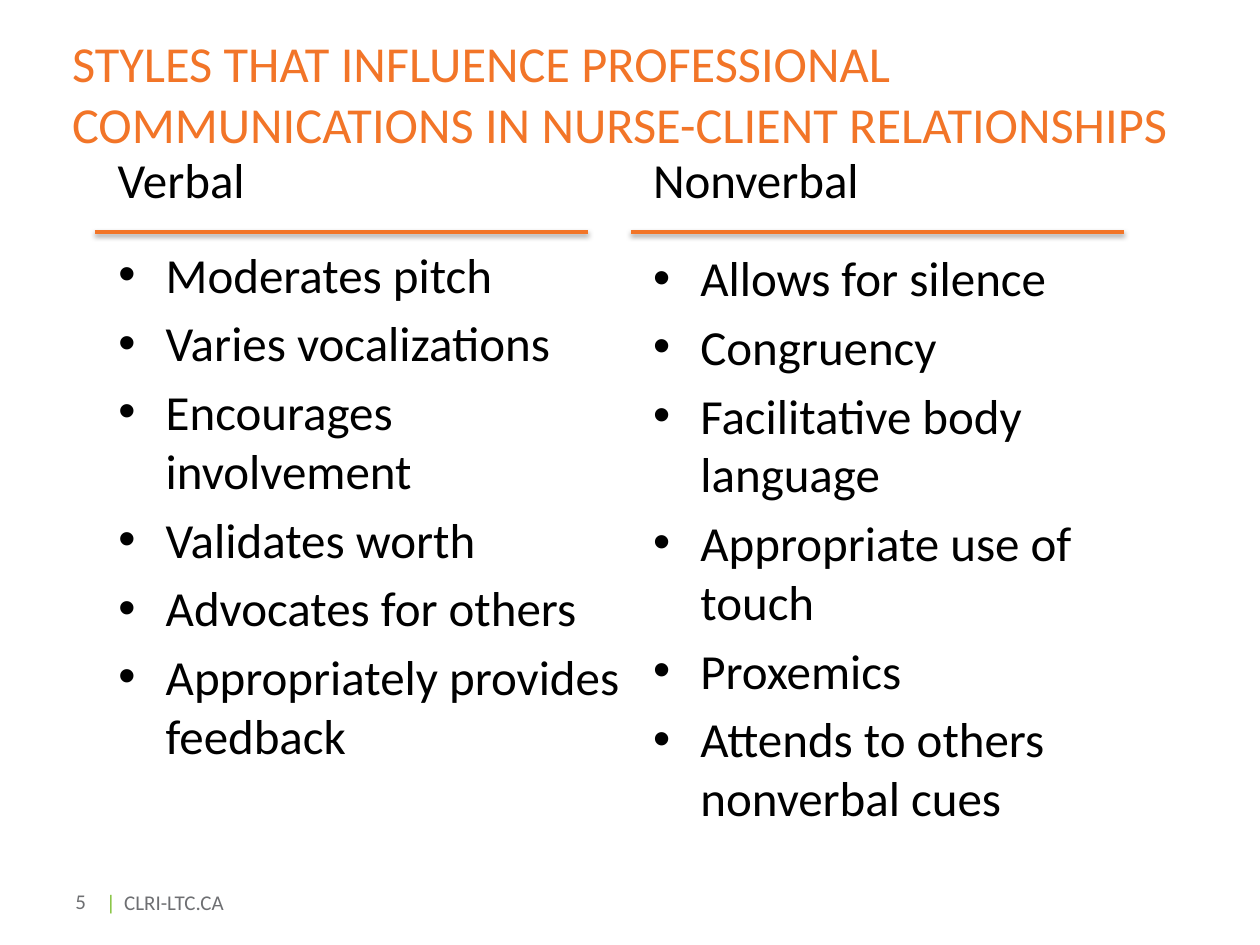
import pptx
import pptx.util
import pptx.dml.color
import pptx.enum.shapes
import pptx.enum.text
import pptx.oxml
import pptx.oxml.ns

Pt = pptx.util.Pt
Align = pptx.enum.text.PP_ALIGN
Anchor = pptx.enum.text.MSO_ANCHOR

COLORS = {"orange": "F27528", "black": "000000", "gray": "6E6F72", "green": "7CBF30"}
FONT = "Calibri"
BODY_SIZE = 28
HANG = 27
RULE_TOP = 132.5
RULE_WIDTH = 282

TITLE = "STYLES THAT INFLUENCE PROFESSIONAL COMMUNICATIONS IN NURSE-CLIENT RELATIONSHIPS"
COLUMNS = [
    {
        "heading": "Verbal",
        "heading_box": (60, 82, 288, 50),
        "list_box": (60.5, 136, 312, 279),
        "rule_left": 54,
        "styles": [
            "Moderates pitch",
            "Varies vocalizations",
            "Encourages involvement",
            "Validates worth",
            "Advocates for others",
            "Appropriately provides feedback",
        ],
    },
    {
        "heading": "Nonverbal",
        "heading_box": (366, 82, 288, 50),
        "list_box": (366, 138, 318, 285),
        "rule_left": 360.5,
        "styles": [
            "Allows for silence",
            "Congruency",
            "Facilitative body language",
            "Appropriate use of touch",
            "Proxemics",
            "Attends to others nonverbal cues",
        ],
    },
]


def drawing_element(xml):
    tag, rest = xml[1:].split(" ", 1)
    return pptx.oxml.parse_xml(f"<{tag} {pptx.oxml.ns.nsdecls('a')} {rest}")


def style_font(font, size, color):
    font.name = FONT
    font.size = Pt(size)
    font.bold = False
    font.color.rgb = pptx.dml.color.RGBColor.from_string(COLORS[color])


def place(box, bounds, anchor):
    box.left, box.top, box.width, box.height = (Pt(length) for length in bounds)
    frame = box.text_frame
    frame.word_wrap = True
    frame.auto_size = pptx.enum.text.MSO_AUTO_SIZE.NONE
    frame.vertical_anchor = anchor
    return frame


def fill_line(box, bounds, text, size, color, anchor=Anchor.TOP):
    frame = place(box, bounds, anchor)
    frame.text = text
    line = frame.paragraphs[0]
    line.alignment = Align.LEFT
    line.space_before = Pt(0)
    style_font(line.runs[0].font, size, color)


def fill_list(box, bounds, styles):
    frame = place(box, bounds, Anchor.TOP)
    frame.text = "\n".join(styles)
    for index, item in enumerate(frame.paragraphs):
        properties = item._p.get_or_add_pPr()
        properties.set("marL", str(Pt(HANG)))
        properties.set("indent", str(-Pt(HANG)))
        properties.append(drawing_element('<a:buFont typeface="Arial"/>'))
        properties.append(drawing_element('<a:buChar char="•"/>'))
        item.space_before = Pt(0.2 * BODY_SIZE if index else 0)
        style_font(item.runs[0].font, BODY_SIZE, "black")


def add_rule(slide, left):
    rule = slide.shapes.add_connector(
        pptx.enum.shapes.MSO_CONNECTOR.STRAIGHT,
        Pt(left), Pt(RULE_TOP), Pt(left + RULE_WIDTH), Pt(RULE_TOP),
    )
    rule.line.width = Pt(2)
    rule.line.color.rgb = pptx.dml.color.RGBColor.from_string(COLORS["orange"])
    rule._element.spPr.append(drawing_element(
        '<a:effectLst >'
        f'<a:outerShdw blurRad="{Pt(3.1)}" dist="{Pt(1.6)}" dir="5400000" rotWithShape="0">'
        f'<a:srgbClr val="{COLORS["black"]}"><a:alpha val="38000"/></a:srgbClr>'
        '</a:outerShdw></a:effectLst>'
    ))


def add_footer(slide):
    page_number = slide.shapes.add_textbox(0, 0, 0, 0)
    fill_line(page_number, (36, 500.5, 61, 29), "5", 12, "gray", Anchor.MIDDLE)

    site = slide.shapes.add_textbox(0, 0, 0, 0)
    line = place(site, (53.5, 504.5, 218, 22), Anchor.TOP).paragraphs[0]
    line._p.get_or_add_pPr().append(drawing_element(
        f'<a:tabLst ><a:tab pos="{Pt(10.4)}" algn="l"/></a:tabLst>'
    ))
    for text, color in (("|", "green"), ("\tCLRI-LTC.CA", "gray")):
        part = line.add_run()
        part.text = text
        style_font(part.font, 12, color)


def main():
    deck = pptx.Presentation()
    deck.slide_width, deck.slide_height = Pt(720), Pt(540)
    slide = deck.slides.add_slide(deck.slide_layouts.get_by_name("Comparison"))
    title, *bodies = list(slide.placeholders)[:5]

    add_footer(slide)
    fill_line(title, (34, 8, 654, 90), TITLE, 28.8, "orange", Anchor.MIDDLE)
    for column, heading, styles in zip(COLUMNS, bodies[::2], bodies[1::2]):
        fill_line(heading, column["heading_box"], column["heading"], BODY_SIZE, "black")
        fill_list(styles, column["list_box"], column["styles"])
        add_rule(slide, column["rule_left"])

    deck.save("out.pptx")


if __name__ == "__main__":
    main()
